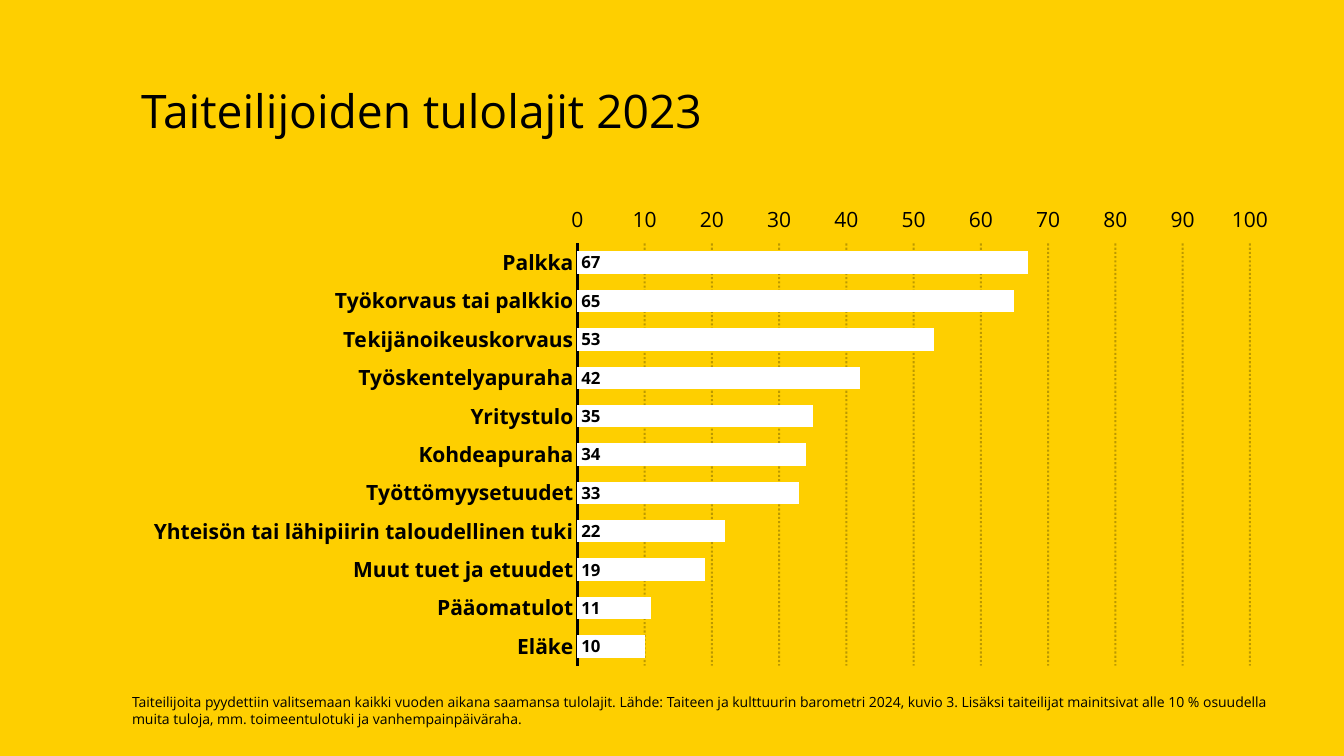
from lxml import etree
from pptx import Presentation
from pptx.chart.data import CategoryChartData
from pptx.dml.color import RGBColor
from pptx.enum.chart import XL_CHART_TYPE as ChartType
from pptx.enum.chart import XL_LABEL_POSITION as LabelPosition
from pptx.enum.chart import XL_TICK_MARK as TickMark
from pptx.enum.dml import MSO_LINE as LineDash
from pptx.enum.text import MSO_ANCHOR as Anchor
from pptx.enum.text import PP_ALIGN as Align
from pptx.oxml import parse_xml
from pptx.oxml.ns import nsdecls, qn
from pptx.util import Inches, Pt

TITLE = "Taiteilijoiden tulolajit 2023"
NOTE = (
    "Taiteilijoita pyydettiin valitsemaan kaikki vuoden aikana saamansa tulolajit. "
    "Lähde: Taiteen ja kulttuurin barometri 2024, kuvio 3. "
    "Lisäksi taiteilijat mainitsivat alle 10 % osuudella muita tuloja, "
    "mm. toimeentulotuki ja vanhempainpäiväraha."
)
INCOME_SHARES = {
    "Palkka": 67,
    "Työkorvaus tai palkkio": 65,
    "Tekijänoikeuskorvaus": 53,
    "Työskentelyapuraha": 42,
    "Yritystulo": 35,
    "Kohdeapuraha": 34,
    "Työttömyysetuudet": 33,
    "Yhteisön tai lähipiirin taloudellinen tuki": 22,
    "Muut tuet ja etuudet": 19,
    "Pääomatulot": 11,
    "Eläke": 10,
}

YELLOW = RGBColor(0xFE, 0xCF, 0x00)
BLACK = RGBColor(0x00, 0x00, 0x00)
WHITE = RGBColor(0xFF, 0xFF, 0xFF)
FONT = "Open Sans"
# Shares of the chart frame taken by the bars themselves
PLOT_AREA = {"x": 0.385, "y": 0.1, "w": 0.58, "h": 0.88}


def format_font(font, size, bold=False):
    font.name = FONT
    font.size = Pt(size)
    font.bold = bold
    font.color.rgb = BLACK


def write_text(shape, text, size, anchor=Anchor.TOP, line_spacing=None):
    frame = shape.text_frame
    frame.word_wrap = True
    frame.vertical_anchor = anchor
    paragraph = frame.paragraphs[0]
    paragraph.text = text
    paragraph.alignment = Align.LEFT
    paragraph.line_spacing = line_spacing
    format_font(paragraph.runs[0].font, size)
    return frame


def place_plot_area(chart):
    """Fix the inner plot area at the shares in PLOT_AREA."""
    plot_area = chart.element.find(".//" + qn("c:plotArea"))
    for layout in plot_area.findall(qn("c:layout")):
        plot_area.remove(layout)
    settings = {"layoutTarget": "inner", "xMode": "edge", "yMode": "edge", **PLOT_AREA}
    layout = parse_xml(f"<c:layout {nsdecls('c')}><c:manualLayout/></c:layout>")
    for name, value in settings.items():
        etree.SubElement(layout[0], qn("c:" + name)).set("val", str(value))
    plot_area.insert(0, layout)


def format_axes(chart):
    categories = chart.category_axis
    categories.reverse_order = True
    categories.major_tick_mark = TickMark.NONE
    categories.has_major_gridlines = False
    categories.format.line.color.rgb = BLACK
    categories.format.line.width = Pt(2)
    format_font(categories.tick_labels.font, 15, bold=True)

    values = chart.value_axis
    values.minimum_scale, values.maximum_scale, values.major_unit = 0, 100, 10
    values.major_tick_mark = TickMark.OUTSIDE
    values.format.line.fill.background()
    format_font(values.tick_labels.font, 15)

    values.has_major_gridlines = True
    grid = values.major_gridlines.format.line
    grid.color.rgb = BLACK
    grid.width = Pt(1.5)
    grid.dash_style = LineDash.ROUND_DOT
    grid_color = values.major_gridlines._xAx.find(
        qn("c:majorGridlines")).find(".//" + qn("a:srgbClr"))
    etree.SubElement(grid_color, qn("a:alpha")).set("val", "25000")


def add_income_chart(slide):
    data = CategoryChartData()
    data.categories = list(INCOME_SHARES)
    data.add_series("Series 1", list(INCOME_SHARES.values()))
    chart = slide.shapes.add_chart(
        ChartType.BAR_CLUSTERED,
        Inches(1.3), Inches(1.94), Inches(11.5), Inches(4.76), data).chart
    chart.has_title = False
    chart.has_legend = False
    format_font(chart.font, 10)
    place_plot_area(chart)
    format_axes(chart)

    plot = chart.plots[0]
    plot.gap_width = 71
    plot.vary_by_categories = False
    series = plot.series[0]
    series.format.fill.solid()
    series.format.fill.fore_color.rgb = WHITE
    series.format.line.fill.background()
    labels = series.data_labels
    labels.show_value = True
    labels.position = LabelPosition.INSIDE_BASE
    format_font(labels.font, 12, bold=True)


def main():
    presentation = Presentation()
    presentation.slide_width = Inches(13.33)
    presentation.slide_height = Inches(7.5)
    slide = presentation.slides.add_slide(presentation.slide_layouts[5])
    slide.background.fill.solid()
    slide.background.fill.fore_color.rgb = YELLOW

    title = slide.shapes.title
    title.left, title.top = Inches(1.3), Inches(0.4)
    title.width, title.height = Inches(11.12), Inches(1.45)
    write_text(title, TITLE, 33, anchor=Anchor.MIDDLE, line_spacing=0.9)

    add_income_chart(slide)

    note = slide.shapes.add_textbox(
        Inches(1.31), Inches(6.65), Inches(11.5), Inches(0.61))
    note_frame = write_text(note, NOTE, 10, anchor=Anchor.BOTTOM)
    note_frame.margin_left = 0

    presentation.save("out.pptx")


if __name__ == "__main__":
    main()
